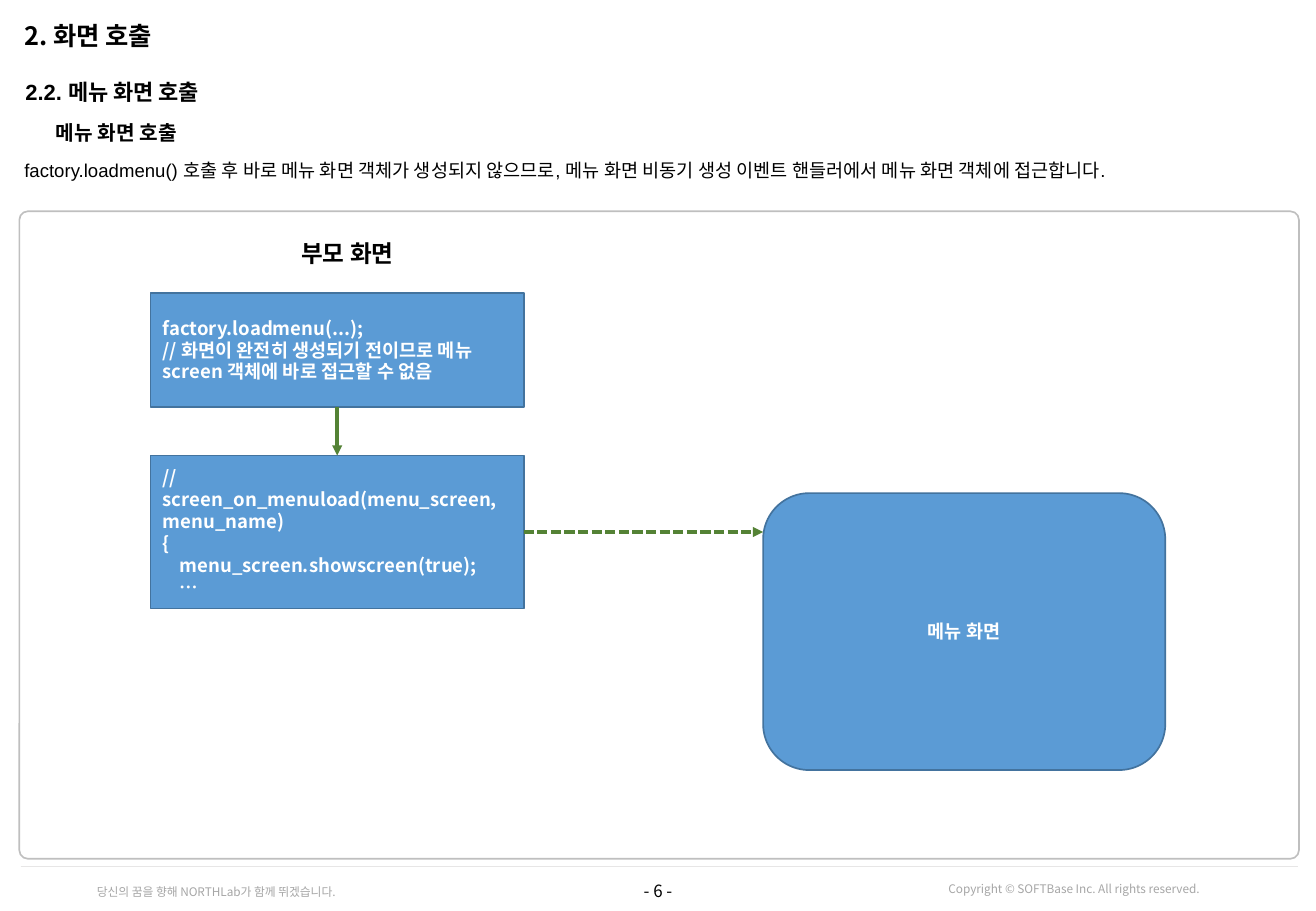
from dataclasses import dataclass

from lxml import etree
from pptx import Presentation
from pptx.dml.color import RGBColor
from pptx.enum.dml import MSO_LINE
from pptx.enum.shapes import MSO_CONNECTOR, MSO_SHAPE
from pptx.enum.text import MSO_ANCHOR, PP_ALIGN
from pptx.oxml.ns import qn
from pptx.util import Pt

EMU_PER_PX = 9144
LEFT, CENTER, RIGHT = PP_ALIGN.LEFT, PP_ALIGN.CENTER, PP_ALIGN.RIGHT
TOP, MIDDLE = MSO_ANCHOR.TOP, MSO_ANCHOR.MIDDLE
RECTANGLE, ROUNDED = MSO_SHAPE.RECTANGLE, MSO_SHAPE.ROUNDED_RECTANGLE
STRAIGHT = MSO_CONNECTOR.STRAIGHT
DASH = MSO_LINE.SQUARE_DOT
BOTTOM_SIDE, RIGHT_SIDE, TOP_SIDE = 2, 3, 0


@dataclass(frozen=True)
class Theme:
    korean: str = "Noto Sans CJK KR"
    latin: str = "Arial"
    black: str = "000000"
    white: str = "FFFFFF"
    muted: str = "A6A6A6"
    rule: str = "E7E6E6"
    frame: str = "BFBFBF"
    box: str = "5B9BD5"
    box_edge: str = "43739E"
    arrow: str = "548235"
    title: int = 15
    caption: int = 14
    section: int = 13
    topic: int = 12
    body: int = 11
    page: int = 10
    footer: int = 7
    code_pitch: int = 13


THEME = Theme()


def px(value):
    return round(value * EMU_PER_PX)


def write_text(shape, lines, size, color, bold=False, font=THEME.korean,
               align=LEFT, anchor=TOP, inset=(10, 5), pitch=None, wrap=True):
    frame = shape.text_frame
    frame.word_wrap = wrap
    frame.vertical_anchor = anchor
    frame.margin_left = frame.margin_right = px(inset[0])
    frame.margin_top = frame.margin_bottom = px(inset[1])
    for index, line in enumerate(lines):
        paragraph = frame.add_paragraph() if index else frame.paragraphs[0]
        paragraph.text = line
        paragraph.alignment = align
        if pitch:
            paragraph.line_spacing = Pt(pitch)
        paragraph.font.size = Pt(size)
        paragraph.font.bold = bold
        paragraph.font.color.rgb = RGBColor.from_string(color)
        paragraph.font.name = font
        properties = paragraph.font._element
        etree.SubElement(properties, qn("a:ea")).set("typeface", THEME.korean)


def add_label(slide, box, text, size, color, **style):
    shape = slide.shapes.add_textbox(*map(px, box))
    write_text(shape, [text], size, color, **style)


def add_box(slide, kind, box, edge, fill=None):
    shape = slide.shapes.add_shape(kind, *map(px, box))
    shape.shadow.inherit = False
    if fill:
        shape.fill.solid()
        shape.fill.fore_color.rgb = RGBColor.from_string(fill)
    else:
        shape.fill.background()
    shape.line.color.rgb = RGBColor.from_string(edge)
    shape.line.width = Pt(1)
    return shape


def add_line(slide, start, end, color, width, arrow=False):
    connector = slide.shapes.add_connector(STRAIGHT, *map(px, start + end))
    connector.line.color.rgb = RGBColor.from_string(color)
    connector.line.width = Pt(width)
    if arrow:
        line = connector.line._get_or_add_ln()
        etree.SubElement(line, qn("a:tailEnd")).set("type", "triangle")
    etree.SubElement(connector._element.spPr, qn("a:effectLst"))
    return connector


def add_footer(slide, box):
    left, top, width, height = box
    add_line(slide, (left + 17, top), (left + width - 15, top), THEME.rule, 0.5)
    add_label(slide, (left, top + 5, width, 31), "- 6 -", THEME.page,
              THEME.black, align=CENTER, anchor=MIDDLE)
    notes = [
        ((left + 58, top + 10, 228, 22), "당신의 꿈을 향해 NORTHLab가 함께 뛰겠습니다."),
        ((left + 770, top + 8, 227, 22), "Copyright © SOFTBase Inc. All rights reserved."),
    ]
    for note_box, text in notes:
        add_label(slide, note_box, text, THEME.footer, THEME.muted,
                  align=RIGHT, anchor=MIDDLE)


def add_headings(slide, box):
    left, top, width, height = box
    right = left + width
    headings = [
        (0, 0, 34, "2. 화면 호출", THEME.title, True, THEME.korean),
        (1, 48, 28, "2.2. 메뉴 화면 호출", THEME.section, True, THEME.latin),
        (26, 82, 28, "메뉴 화면 호출", THEME.topic, True, THEME.korean),
        (0, 114, 41, "factory.loadmenu() 호출 후 바로 메뉴 화면 객체가 생성되지 않으므로, "
         "메뉴 화면 비동기 생성 이벤트 핸들러에서 메뉴 화면 객체에 접근합니다.",
         THEME.body, False, THEME.latin),
    ]
    for indent, offset, line_height, text, size, bold, font in headings:
        x = left + indent
        add_label(slide, (x, top + offset, right - x, line_height), text, size,
                  THEME.black, bold=bold, font=font, inset=(4, 4))


def add_diagram(slide, box):
    left, top, width, height = box
    frame = add_box(slide, ROUNDED, box, THEME.frame)
    frame.adjustments[0] = 0.013
    add_label(slide, (left + 217, top + 18, 106, 34), "부모 화면", THEME.caption,
              THEME.black, bold=True, font=THEME.latin, align=CENTER, wrap=False)

    def add_step(kind, place, lines, align=LEFT):
        x, y, step_width, step_height = place
        shape = add_box(slide, kind, (left + x, top + y, step_width, step_height),
                        THEME.box_edge, THEME.box)
        write_text(shape, lines, THEME.body, THEME.white, bold=True, align=align,
                   anchor=MIDDLE, pitch=THEME.code_pitch)
        return shape

    call = add_step(RECTANGLE, (108, 67, 307, 94), [
        "factory.loadmenu(...);\v// 화면이 완전히 생성되기 전이므로 메뉴 screen 객체에 바로 접근할 수 없음",
    ])
    handler = add_step(RECTANGLE, (108, 201, 307, 126), [
        "//\vscreen_on_menuload(menu_screen, menu_name)\v{",
        "    menu_screen.showscreen(true);",
        "    …",
    ])
    add_step(ROUNDED, (612, 232, 331, 228), ["메뉴 화면"], CENTER)

    down = add_line(slide, (left + 262, top + 161), (left + 262, top + 201),
                    THEME.arrow, 2, arrow=True)
    down.begin_connect(call, BOTTOM_SIDE)
    down.end_connect(handler, TOP_SIDE)
    across = add_line(slide, (left + 415, top + 264), (left + 612, top + 264),
                      THEME.arrow, 2, arrow=True)
    across.line.dash_style = DASH
    across.begin_connect(handler, RIGHT_SIDE)


def main():
    presentation = Presentation()
    presentation.slide_width = px(1083)
    presentation.slide_height = px(750)
    slide = presentation.slides.add_slide(presentation.slide_layouts[6])
    add_footer(slide, (0, 713, 1083, 37))
    add_headings(slide, (16, 13, 1055, 155))
    add_diagram(slide, (16, 174, 1053, 533))
    presentation.save("out.pptx")


if __name__ == "__main__":
    main()
